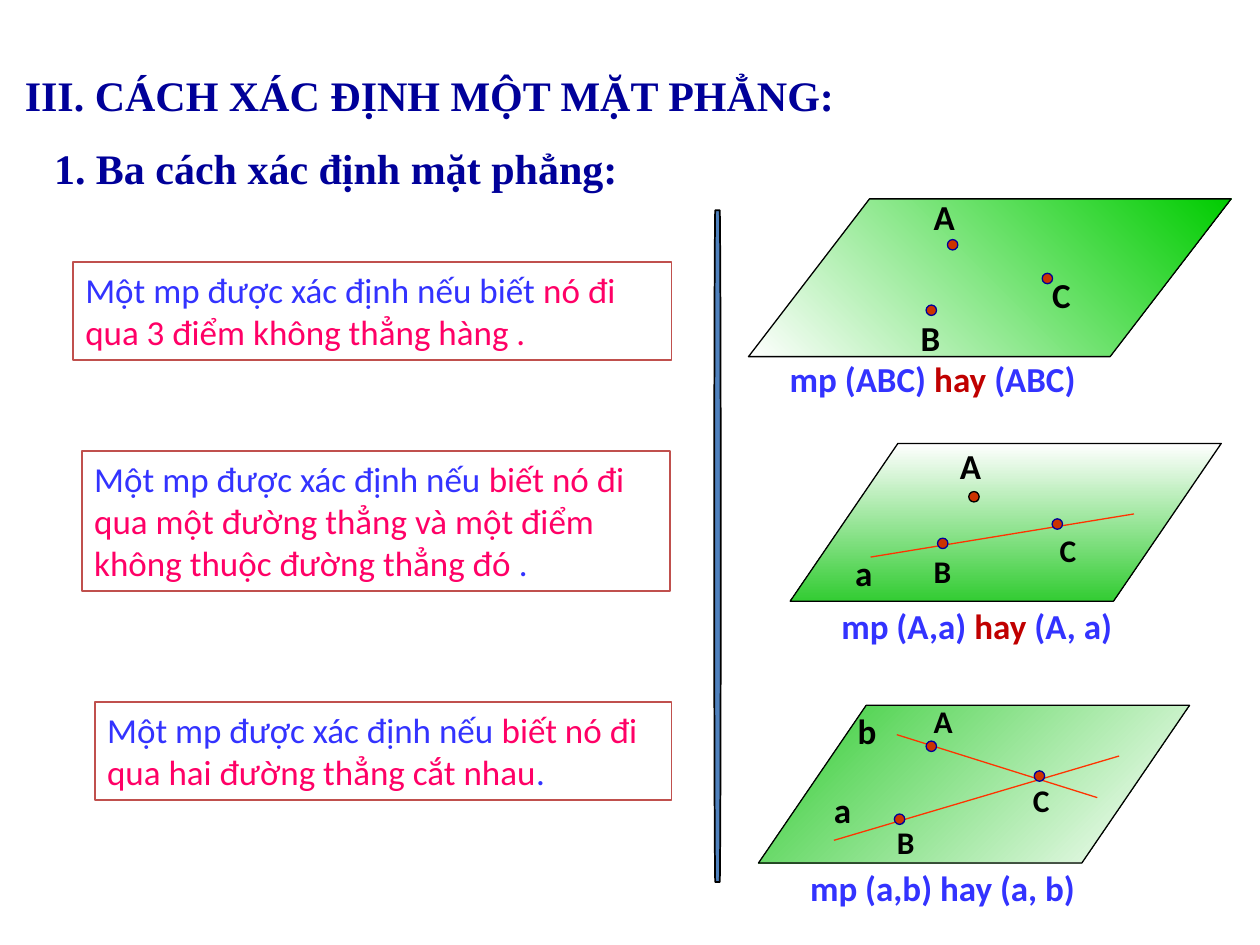
"""Build a geometry slide on three ways to determine a plane."""
from lxml.etree import SubElement
from pptx import Presentation
from pptx.dml.color import RGBColor
from pptx.enum.shapes import MSO_CONNECTOR, MSO_SHAPE
from pptx.enum.text import MSO_ANCHOR
from pptx.oxml.ns import qn
from pptx.util import Cm, Pt

COLORS = {
    "navy": "000099", "black": "000000", "white": "FFFFFF", "blue": "3333FF",
    "pink": "FF0066", "red": "C00000", "border": "C0504D", "divider": "4F81BD",
    "point": "CC3300", "line": "FF3300", "bright": "00CC00", "green": "33CC33",
}
POINT_SIZE = 0.21
DIVIDER = (14.4, 4.24, 0.13, 13.54)

HEADINGS = [
    ("III. CÁCH XÁC ĐỊNH MỘT MẶT PHẲNG:", (0.25, 1.27, 16.99, 1.27)),
    ("1. Ba cách xác định mặt phẳng:", (0.84, 2.74, 11.99, 1.27)),
]

STATEMENTS = [
    ((1.47, 5.28, 12.07, 1.98),
     [("Một mp được xác định nếu biết ", "blue"),
      ("nó đi qua 3 điểm không thẳng hàng .", "pink")]),
    ((1.65, 9.09, 11.86, 2.82),
     [("Một mp được xác định nếu ", "blue"),
      ("biết nó đi qua một đường thẳng và một điểm không thuộc đường thẳng đó", "pink"),
      (" .", "blue")]),
    ((1.91, 14.15, 11.63, 1.98),
     [("Một mp được xác định nếu ", "blue"),
      ("biết nó đi qua hai đường thẳng cắt nhau", "pink"),
      (".", "blue")]),
]

FIGURES = [
    {
        "plane": (15.09, 4.01, 9.73, 3.18), "slant": 0.767,
        "gradient": ("white", "bright", 45),
        "lines": [],
        "points": [(18.67, 6.15, "navy"), (19.1, 4.83, "navy"), (21.01, 5.51, "navy")],
        "labels": [("A", 18.57, 3.81, 1.7, 20), ("B", 18.31, 6.25, 1.7, 20),
                   ("C", 20.96, 5.38, 2.11, 20)],
        "caption": (15.67, 7.09, 7.19, 1.12),
        "spans": [("mp (ABC)", "blue"), (" hay ", "red"), ("(ABC)", "blue")],
    },
    {
        "plane": (15.93, 8.94, 8.69, 3.18), "slant": 0.683,
        "gradient": ("white", "green", 270),
        "lines": [(17.55, 11.23, 22.86, 10.36)],
        "points": [(19.53, 9.91, "black"), (21.21, 10.46, "navy"), (18.9, 10.85, "navy")],
        "labels": [("a", 16.99, 11, 2.11, 20), ("A", 19.1, 8.84, 2.54, 20),
                   ("B", 18.57, 11, 1.47, 18), ("C", 21.11, 10.59, 1.47, 18)],
        "caption": (16.71, 12.07, 6.3, 1.12),
        "spans": [("mp (A,a) ", "blue"), ("hay", "red"), (" (A, a)", "blue")],
    },
    {
        "plane": (15.29, 14.22, 8.69, 3.18), "slant": 0.683,
        "gradient": ("green", "white", 315),
        "lines": [(16.81, 16.94, 22.56, 15.24), (18.08, 14.81, 22.12, 16.08)],
        "points": [(18.03, 16.41, "navy"), (20.85, 15.54, "navy"), (18.67, 14.94, "navy")],
        "labels": [("a", 16.56, 15.77, 1.47, 20), ("b", 17.04, 14.17, 1.47, 20),
                   ("B", 17.83, 16.46, 1.07, 18), ("C", 20.57, 15.62, 1.07, 18),
                   ("A", 18.57, 14.02, 1.07, 18)],
        "caption": (16.08, 17.35, 5.92, 1.12),
        "spans": [("mp (a,b) hay (a, b)", "blue")],
    },
]


def color(name):
    return RGBColor.from_string(COLORS[name])


def lengths(values):
    return [Cm(value) for value in values]


def set_line(shape, name, width):
    shape.line.color.rgb = color(name)
    shape.line.width = Pt(width)


def add_text(page, place, spans, size=20, bold=True, font="Calibri", wrap=True):
    box = page.shapes.add_textbox(*lengths(place))
    frame = box.text_frame
    frame.word_wrap = wrap
    frame.vertical_anchor = MSO_ANCHOR.TOP
    paragraph = frame.paragraphs[0]
    paragraph.font.name = font
    paragraph.font.size = Pt(size)
    paragraph.font.bold = bold
    for text, name in spans:
        span = paragraph.add_run()
        span.text = text
        span.font.color.rgb = color(name)
    return box


def add_outlined(page, kind, place, line, width, fill=None):
    shape = page.shapes.add_shape(kind, *lengths(place))
    shape.shadow.inherit = False
    set_line(shape, line, width)
    if fill:
        shape.fill.solid()
        shape.fill.fore_color.rgb = color(fill)
    return shape


def add_plane(page, place, slant, gradient):
    plane = add_outlined(page, MSO_SHAPE.PARALLELOGRAM, place, "black", 0.75)
    plane.adjustments[0] = slant
    *names, angle = gradient
    plane.fill.gradient()
    plane.fill.gradient_angle = angle
    for stop, name, position in zip(plane.fill.gradient_stops, names, (0, 1)):
        stop.color.rgb = color(name)
        stop.position = position


def add_line(page, ends):
    line = page.shapes.add_connector(MSO_CONNECTOR.STRAIGHT, *lengths(ends))
    set_line(line, "line", 0.75)
    SubElement(line._element.spPr, qn("a:effectLst"))


def add_figure(page, figure):
    add_plane(page, figure["plane"], figure["slant"], figure["gradient"])
    for ends in figure["lines"]:
        add_line(page, ends)
    for left, top, outline in figure["points"]:
        place = (left, top, POINT_SIZE, POINT_SIZE)
        add_outlined(page, MSO_SHAPE.OVAL, place, outline, 0.75, "point")
    for text, left, top, width, size in figure["labels"]:
        height = 1.09 if size == 20 else 1.02
        add_text(page, (left, top, width, height), [(text, "black")], size)
    add_text(page, figure["caption"], figure["spans"])


def main():
    deck = Presentation()
    deck.slide_width, deck.slide_height = Cm(25.4), Cm(19.05)
    page = deck.slides.add_slide(deck.slide_layouts[6])
    for text, place in HEADINGS:
        add_text(page, place, [(text, "navy")], 24, font="Times New Roman", wrap=False)
    add_outlined(page, MSO_SHAPE.FLOWCHART_TERMINATOR, DIVIDER, "black", 1, "divider")
    for place, spans in STATEMENTS:
        set_line(add_text(page, place, spans, bold=False), "border", 1)
    for figure in FIGURES:
        add_figure(page, figure)
    deck.save("out.pptx")


if __name__ == "__main__":
    main()
